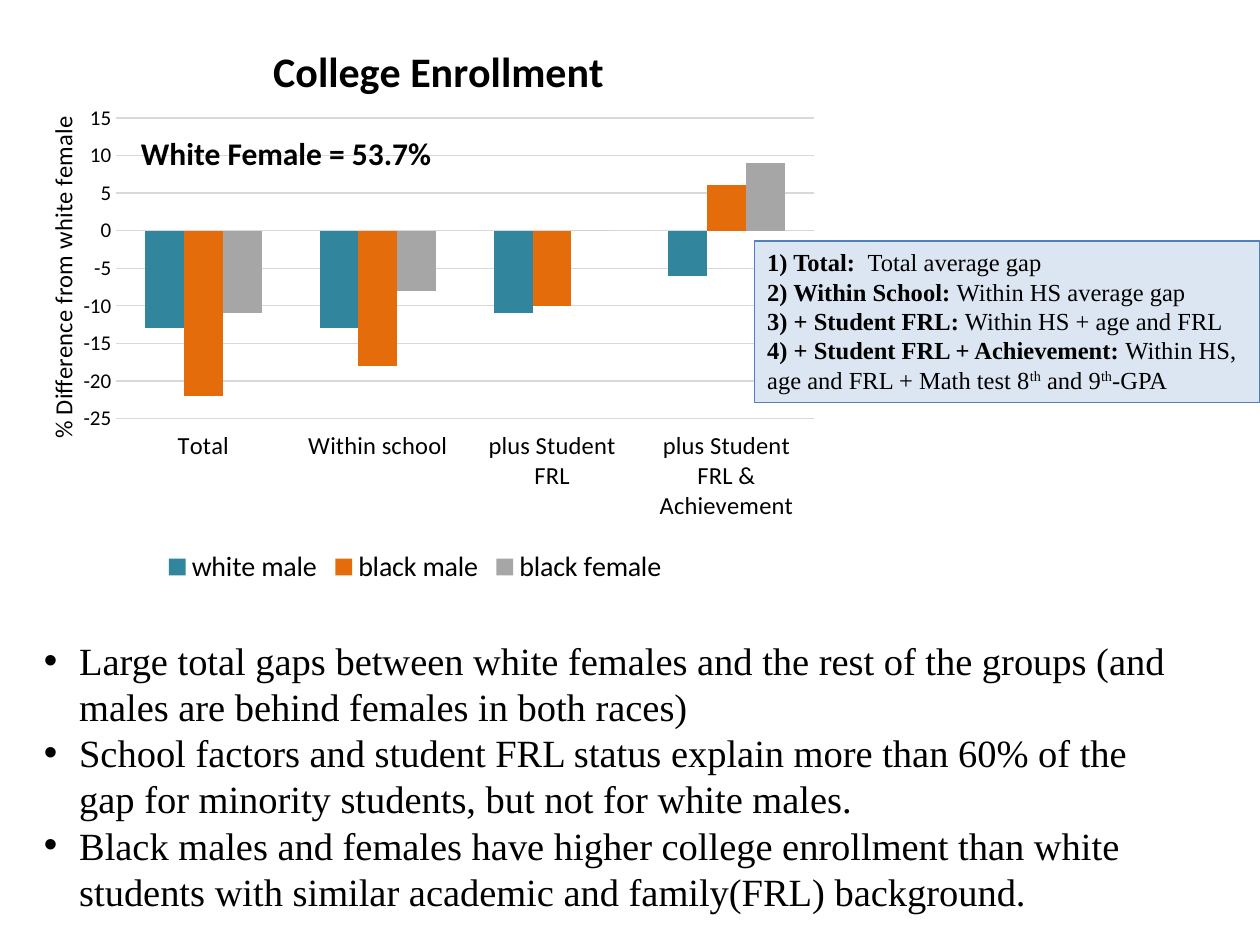
from lxml import etree
from pptx import Presentation, util as u
from pptx.chart.data import CategoryChartData
from pptx.dml.color import RGBColor
from pptx.enum import chart as ch, shapes, text
from pptx.oxml import ns

# Content
TITLE = "College Enrollment"
AXIS = "% Difference from white female"
CATS = ["Total", "Within school", "plus Student FRL",
        "plus Student FRL & Achievement"]
SERIES = [
    ("white male", [-13, -13, -11, -6], "teal"),
    ("black male", [-22, -18, -10, 6], "orange"),
    ("black female", [-11, -8, 0, 9], "gray"),
]
BASE = "White Female = 53.7%"
# Each model line: (text, style), where style is b = bold, s = superscript
MODELS = [
    [("1) Total:  ", "b"), ("Total average gap", "")],
    [("2) Within School: ", "b"), ("Within HS average gap", "")],
    [("3) + Student FRL:", "b"), (" Within HS + age and FRL", "")],
    [("4) + Student FRL + Achievement: ", "b"),
     ("Within HS, age and FRL + Math test 8", ""), ("th", "s"),
     (" and 9", ""), ("th", "s"), ("-GPA", "")],
]
POINTS = [
    "Large total gaps between white females and the rest of the groups "
    "(and males are behind females in both races)",
    "School factors and student FRL status explain more than 60% of the gap "
    "for minority students, but not for white males.",
    "Black males and females have higher college enrollment than white "
    "students with similar academic and family(FRL) background.",
]
COLORS = {"ink": "000000", "teal": "31859C", "orange": "E46C0A",
          "gray": "A6A6A6", "grid": "D9D9D9", "pale": "DCE6F2",
          "edge": "4F81BD"}
SANS, SERIF = "Calibri", "Times New Roman"

# Places as shares of the slide: left, top, width, height
WIDE, HIGH = u.Inches(10), u.Inches(7.5)
PLACES = {
    "chart": (0, 0, 0.659, 0.624),
    "base": (0.102, 0.135, 0.281, 0.053),
    "models": (0.599, 0.255, 0.401, 0.171),
    "points": (0.025, 0.644, 0.925, 0.397),
}
# Chart parts as shares of the chart
PLOT = {"x": 0.14, "y": 0.2, "w": 0.84, "h": 0.51}
HEAD = {"x": 0.32, "y": 0.06}
SIDE = {"x": 0.05, "y": 0.19}


def place(name):
    x, y, w, h = PLACES[name]
    return int(x * WIDE), int(y * HIGH), int(w * WIDE), int(h * HIGH)


def color(name):
    return RGBColor.from_string(COLORS[name])


def style(font, size, face=SANS, bold=False):
    font.size, font.name, font.bold = u.Pt(size), face, bold
    font.color.rgb = color("ink")


def label(frame, words, size, bold=False):
    frame.text = words
    style(frame.paragraphs[0].runs[0].font, size, bold=bold)


def set_layout(part, spot, index):
    lay = part.find(ns.qn("c:layout"))
    if lay is None:
        lay = etree.Element(ns.qn("c:layout"))
        part.insert(index, lay)
    man = etree.SubElement(lay, ns.qn("c:manualLayout"))
    modes = {"xMode": "edge", "yMode": "edge"}
    if "w" in spot:
        modes = {"layoutTarget": "inner", **modes}
    for tag, val in {**modes, **spot}.items():
        etree.SubElement(man, ns.qn("c:" + tag)).set("val", str(val))


def add_chart(slide):
    data = CategoryChartData()
    data.categories = CATS
    for name, vals, _ in SERIES:
        data.add_series(name, vals)
    chart = slide.shapes.add_chart(
        ch.XL_CHART_TYPE.COLUMN_CLUSTERED, *place("chart"), data).chart
    style(chart.font, 10)
    label(chart.chart_title.text_frame, TITLE, 24, True)
    chart.chart_title.include_in_layout = False

    # Bars
    plot = chart.plots[0]
    plot.gap_width, plot.overlap, plot.vary_by_categories = 150, 0, False
    for bar, (_, _, tint) in zip(plot.series, SERIES):
        bar.invert_if_negative = False
        bar.format.fill.solid()
        bar.format.fill.fore_color.rgb = color(tint)

    # Axes
    cat, val = chart.category_axis, chart.value_axis
    for axis, size in ((cat, 14), (val, 12)):
        axis.major_tick_mark = axis.minor_tick_mark = ch.XL_TICK_MARK.NONE
        axis.format.line.fill.background()
        style(axis.tick_labels.font, size)
    cat.tick_label_position = ch.XL_TICK_LABEL_POSITION.LOW
    val.minimum_scale, val.maximum_scale, val.major_unit = -25, 15, 5
    grid = val.major_gridlines.format.line
    grid.width, grid.color.rgb = u.Pt(0.75), color("grid")
    label(val.axis_title.text_frame, AXIS, 14)
    side = val.axis_title._element
    side.find(".//" + ns.qn("a:bodyPr")).set("rot", "-5400000")

    # Legend and layout
    chart.has_legend = True
    chart.legend.position = ch.XL_LEGEND_POSITION.BOTTOM
    chart.legend.include_in_layout = False
    style(chart.legend.font, 16)
    set_layout(chart.element.find(".//" + ns.qn("c:plotArea")), PLOT, 0)
    set_layout(chart.chart_title._element, HEAD, 1)
    set_layout(side, SIDE, 1)


def add_base(slide):
    frame = slide.shapes.add_textbox(*place("base")).text_frame
    frame.word_wrap = True
    frame.auto_size = text.MSO_AUTO_SIZE.SHAPE_TO_FIT_TEXT
    label(frame, BASE, 18, True)


def add_models(slide):
    box = slide.shapes.add_shape(shapes.MSO_SHAPE.RECTANGLE, *place("models"))
    box.shadow.inherit = False
    box.fill.solid()
    box.fill.fore_color.rgb = color("pale")
    box.line.color.rgb, box.line.width = color("edge"), u.Pt(0.75)
    frame = box.text_frame
    frame.word_wrap = True
    frame.auto_size = text.MSO_AUTO_SIZE.SHAPE_TO_FIT_TEXT
    frame.vertical_anchor = text.MSO_ANCHOR.TOP
    for i, line in enumerate(MODELS):
        para = frame.add_paragraph() if i else frame.paragraphs[0]
        para.alignment = text.PP_ALIGN.LEFT
        for words, kind in line:
            run = para.add_run()
            run.text = words
            style(run.font, 14, SERIF, kind == "b")
            if kind == "s":
                run.font._element.set("baseline", "30000")


def add_points(slide):
    frame = slide.shapes.add_textbox(*place("points")).text_frame
    frame.word_wrap = True
    frame.vertical_anchor = text.MSO_ANCHOR.MIDDLE
    frame.margin_bottom = u.Inches(0.38)
    frame.text = "\n".join(POINTS)
    for para in frame.paragraphs:
        prop = para._p.get_or_add_pPr()
        prop.set("marL", str(u.Inches(0.28)))
        prop.set("indent", str(-u.Inches(0.28)))
        etree.SubElement(prop, ns.qn("a:buFont")).set("typeface", "Arial")
        etree.SubElement(prop, ns.qn("a:buChar")).set("char", "•")
        style(para.runs[0].font, 22, SERIF)


def main():
    deck = Presentation()
    deck.slide_width, deck.slide_height = WIDE, HIGH
    slide = deck.slides.add_slide(deck.slide_layouts[6])
    for add in (add_chart, add_base, add_models, add_points):
        add(slide)
    deck.save("out.pptx")


if __name__ == "__main__":
    main()
